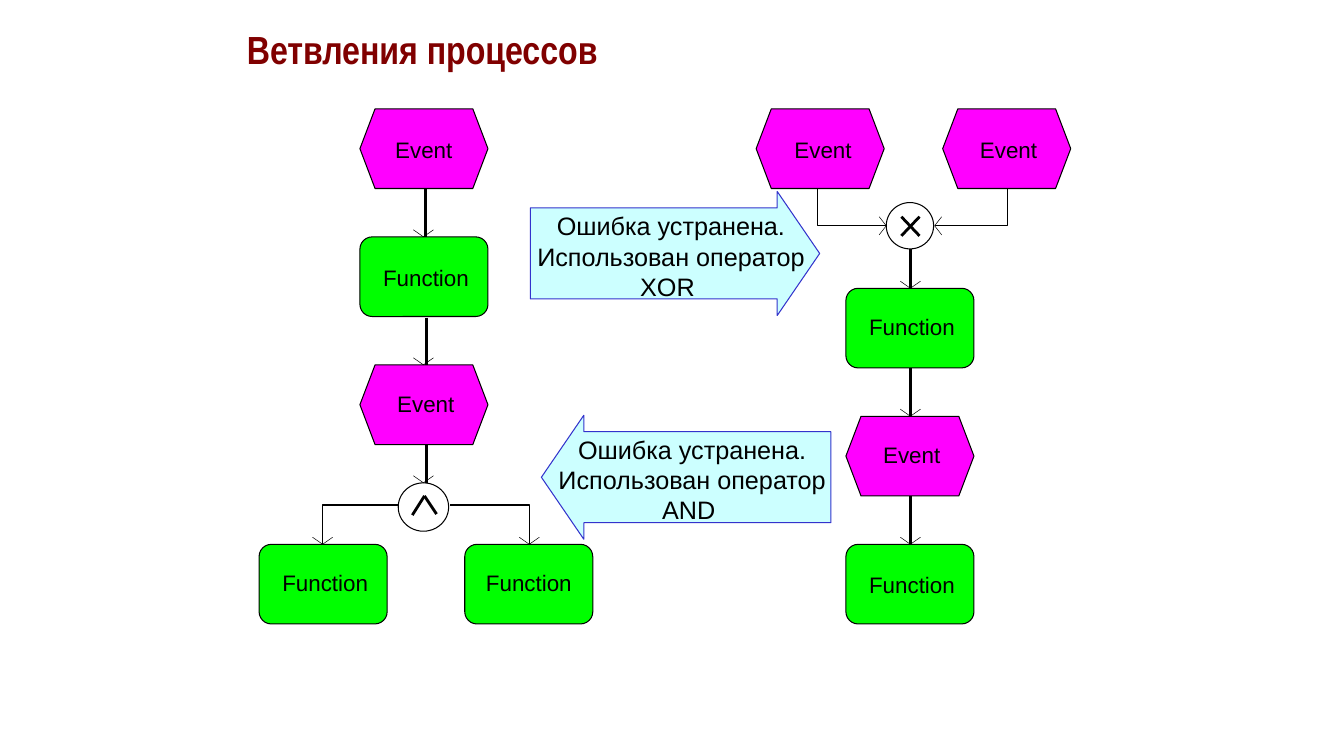
import pptx
import pptx.util
import pptx.dml.color
import pptx.enum.shapes
import pptx.enum.text
import pptx.oxml

Inches = pptx.util.Inches
Pt = pptx.util.Pt
Kind = pptx.enum.shapes.MSO_SHAPE
Align = pptx.enum.text.PP_ALIGN

COLORS = {
    "title": "800000",
    "ink": "000000",
    "event": "FF00FF",
    "task": "00FF00",
    "gate": "FFFFFF",
    "note": "CCFFFF",
    "edge": "3333CC",
}
WIDE, HIGH = 1.27, 0.79


class Chart:
    def __init__(self, slide):
        self.shapes = slide.shapes

    def color(self, name):
        return pptx.dml.color.RGBColor.from_string(COLORS[name])

    def paint(self, shape, fill=None, line="ink", width=0):
        shape.shadow.inherit = False
        if fill:
            shape.fill.solid()
            shape.fill.fore_color.rgb = self.color(fill)
        else:
            shape.fill.background()
        shape.line.color.rgb = self.color(line)
        shape.line.width = Pt(width)

    def text(self, words, x, y, w, h, size, face="Arial", color="ink", wrap=True):
        box = self.shapes.add_textbox(Inches(x), Inches(y), Inches(w), Inches(h))
        frame = box.text_frame
        frame.word_wrap = wrap
        part = frame.paragraphs[0]
        part.text = words
        part.font.size = Pt(size)
        part.font.name = face
        part.font.color.rgb = self.color(color)
        return frame

    def title(self, words):
        frame = self.text(words, 2.35, 0.25, 7.98, 0.75, 28, "Arial Narrow", "title")
        frame.paragraphs[0].font.bold = True
        frame.paragraphs[0].line_spacing = 0.9

    def label(self, words, x, y, w):
        frame = self.text(words, x, y, w, 0.27, 16, wrap=False)
        frame.margin_left = frame.margin_right = 0
        frame.margin_top = frame.margin_bottom = 0

    def preset(self, kind, x, y, w, h, fill, line="ink", width=0):
        shape = self.shapes.add_shape(kind, Inches(x), Inches(y), Inches(w), Inches(h))
        self.paint(shape, fill, line, width)
        return shape

    def trace(self, points, fill=None, width=0):
        spots = [(Inches(x), Inches(y)) for x, y in points]
        form = self.shapes.build_freeform(*spots[0])
        form.add_line_segments(spots[1:], close=fill is not None)
        self.paint(form.convert_to_shape(), fill, width=width)

    def event(self, x, y, left, top):
        cut, mid = 0.15, y + HIGH / 2
        self.trace([(x + cut, y), (x + WIDE - cut, y), (x + WIDE, mid),
                    (x + WIDE - cut, y + HIGH), (x + cut, y + HIGH), (x, mid)], "event")
        self.label("Event", left, top, 0.57)

    def task(self, x, y, left, top):
        shape = self.preset(Kind.ROUNDED_RECTANGLE, x, y, WIDE, HIGH, "task")
        shape.adjustments[0] = 0.154
        self.label("Function", left, top, 0.85)

    def line(self, x1, y1, x2, y2):
        link = self.shapes.add_connector(
            pptx.enum.shapes.MSO_CONNECTOR.STRAIGHT,
            Inches(x1), Inches(y1), Inches(x2), Inches(y2))
        link.line.color.rgb = self.color("ink")
        link.line.width = Pt(0)
        props = link._element.spPr
        props.append(pptx.oxml.parse_xml(
            '<a:effectLst xmlns:a="http://schemas.openxmlformats.org/drawingml/2006/main"/>'))

    def head(self, x, y, way=0):
        if way:
            tail = x - way * 0.07
            points = [(tail, y - 0.09), (x, y), (tail, y + 0.09)]
        else:
            points = [(x - 0.1, y - 0.07), (x, y), (x + 0.1, y - 0.07)]
        self.trace(points, width=0.38)

    def gate(self, x, y, w, h, strokes):
        self.preset(Kind.OVAL, x, y, w, h, "gate")
        for stroke in strokes:
            self.line(*stroke)

    def note(self, kind, x, y, left, words):
        shape = self.preset(kind, x, y, 2.87, 1.23, "note", "edge", 0.75)
        shape.adjustments[0] = 0.734
        shape.adjustments[1] = 0.342
        frame = self.text(words, left, y + 0.14, 2.99, 1, 18)
        frame.paragraphs[0].alignment = Align.CENTER


def main():
    deck = pptx.Presentation()
    deck.slide_width, deck.slide_height = Inches(13.33), Inches(7.5)
    chart = Chart(deck.slides.add_slide(deck.slide_layouts[6]))
    chart.title("Ветвления процессов")

    for event in [(3.57, 1.08, 3.92, 1.35), (3.57, 3.62, 3.94, 3.87),
                  (7.5, 1.08, 7.88, 1.35), (9.35, 1.08, 9.72, 1.35),
                  (8.39, 4.13, 8.76, 4.38)]:
        chart.event(*event)
    for task in [(3.57, 2.35, 3.8, 2.62), (2.57, 5.4, 2.8, 5.65),
                 (4.61, 5.4, 4.82, 5.65), (8.39, 2.86, 8.62, 3.11),
                 (8.39, 5.4, 8.62, 5.67)]:
        chart.task(*task)

    chart.gate(3.95, 4.79, 0.5, 0.48,
               [(4.21, 4.92, 4.09, 5.11), (4.21, 4.92, 4.33, 5.1)])
    chart.gate(8.79, 2.01, 0.47, 0.46,
               [(8.94, 2.15, 9.12, 2.34), (8.94, 2.34, 9.12, 2.15)])

    for x, tip, top, base in [(4.22, 4.2, 1.88, 2.35), (4.23, 4.2, 3.15, 3.62),
                              (4.23, 4.2, 4.41, 4.79), (9.03, 9.03, 2.47, 2.86),
                              (9.03, 9.03, 3.65, 4.13), (9.03, 9.03, 4.92, 5.4)]:
        chart.line(x, top, x, base)
        chart.head(tip, base)
    for start, end in [(3.96, 3.2), (4.46, 5.25)]:
        chart.trace([(start, 5.01), (end, 5.01), (end, 5.4)])
        chart.head(end, 5.4)
    for start, end, way in [(8.11, 8.79, 1), (9.99, 9.27, -1)]:
        chart.trace([(start, 1.88), (start, 2.24), (end, 2.24)])
        chart.head(end, 2.24, way)

    chart.note(Kind.RIGHT_ARROW, 5.26, 1.9, 5.16,
               "Ошибка устранена. Использован оператор XOR ")
    chart.note(Kind.LEFT_ARROW, 5.37, 4.12, 5.37,
               "Ошибка устранена. Использован оператор AND ")
    deck.save("out.pptx")


if __name__ == "__main__":
    main()
